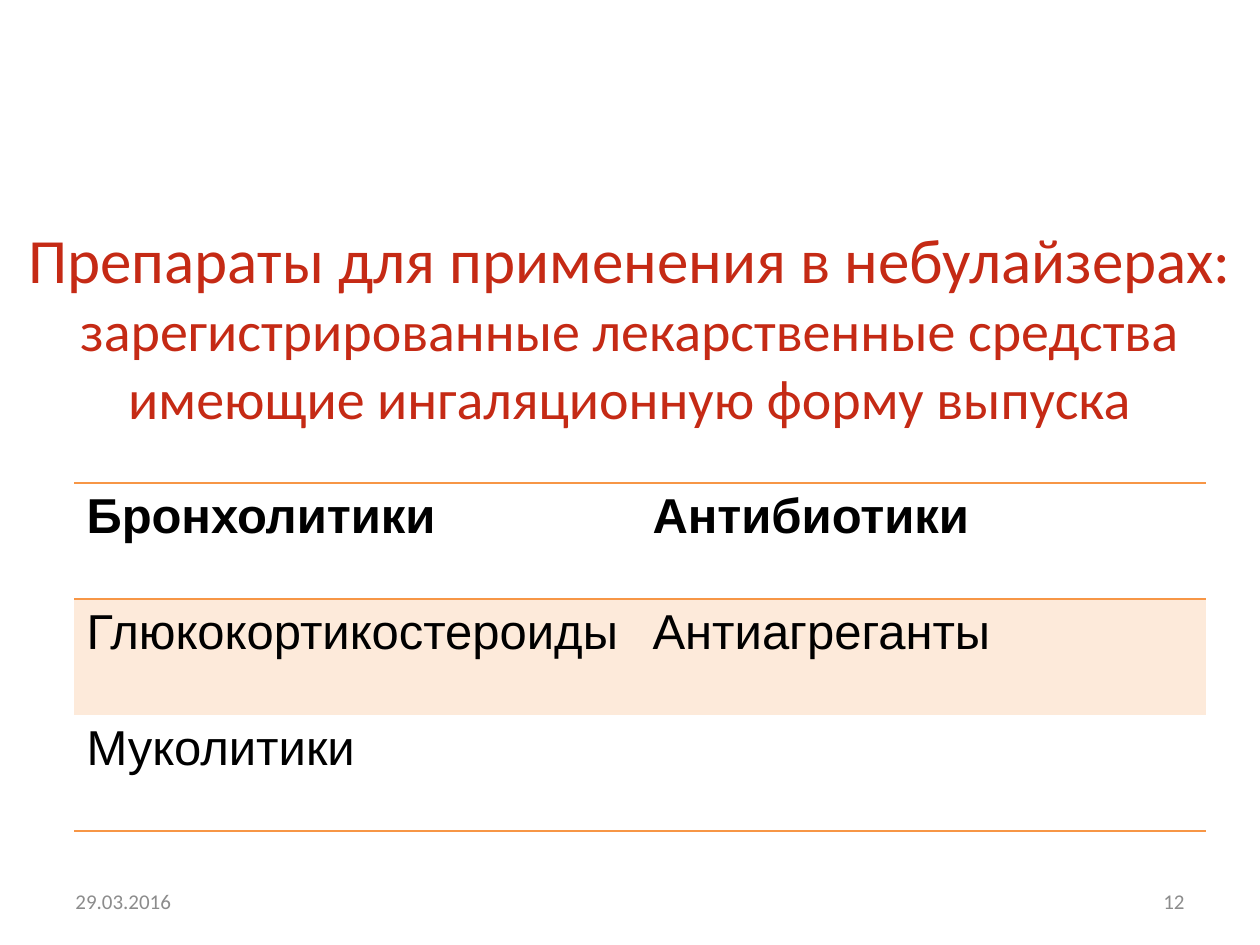
"""Build a slide listing drug groups for use in nebulizers."""
from dataclasses import dataclass

from pptx import Presentation
from pptx import util as u
from pptx.dml.color import RGBColor
from pptx.enum import text
from pptx.oxml import parse_xml
from pptx.oxml.ns import nsdecls


@dataclass(frozen=True)
class Theme:
    title: str = "C52A15"
    rule: str = "F79646"
    band: str = "FDEADA"
    ink: str = "000000"
    muted: str = "8C8C8C"
    heading_size: int = 36
    subheading_size: int = 32
    cell_size: int = 28
    footer_size: int = 12
    heading_font: str = "Calibri"
    cell_font: str = "Arial"


theme = Theme()
PX = u.Inches(1) / 126
ALIGN = text.PP_ALIGN


def px(*lengths):
    return [u.Emu(round(length * PX)) for length in lengths]


def write(words, *, para, size, color, font=theme.heading_font, bold=False, align=ALIGN.LEFT):
    para.alignment = align
    para.space_before = u.Pt(0)
    span = para.add_run()
    span.text = words
    span.font.name = font
    span.font.size = u.Pt(size)
    span.font.bold = bold
    span.font.color.rgb = RGBColor.from_string(color)


deck = Presentation()
deck.slide_width, deck.slide_height = px(1260, 945)
page = deck.slides.add_slide(deck.slide_layouts[5])

title = page.shapes.title
title.left, title.top, title.width, title.height = px(0, 214, 1260, 248)
frame = title.text_frame
frame.auto_size = text.MSO_AUTO_SIZE.NONE
frame.vertical_anchor = text.MSO_ANCHOR.TOP
frame.word_wrap = True
write("Препараты для применения в небулайзерах:", para=frame.paragraphs[0],
      size=theme.heading_size, color=theme.title, align=ALIGN.CENTER)
write("зарегистрированные лекарственные средства имеющие ингаляционную форму выпуска",
      para=frame.add_paragraph(), size=theme.subheading_size, color=theme.title,
      align=ALIGN.CENTER)

for words, left, align in (("29.03.2016", 63, ALIGN.LEFT), ("12", 903, ALIGN.RIGHT)):
    box = page.shapes.add_textbox(*px(left, 876, 294, 50))
    box.text_frame.word_wrap = True
    box.text_frame.vertical_anchor = text.MSO_ANCHOR.MIDDLE
    write(words, para=box.text_frame.paragraphs[0], size=theme.footer_size,
          color=theme.muted, align=align)

drug_groups = (
    ("Бронхолитики", "Антибиотики"),
    ("Глюкокортикостероиды", "Антиагреганты"),
    ("Муколитики", ""),
)
ruled_sides = ("TB", "T", "B")
table = page.shapes.add_table(3, 2, *px(74, 483, 1132, 348)).table
table.first_row = True
table.horz_banding = False

for row, groups in enumerate(drug_groups):
    for column, words in enumerate(groups):
        cell = table.cell(row, column)
        properties = cell._tc.get_or_add_tcPr()
        for side in "LRTB":
            paint = "<a:noFill/>"
            if side in ruled_sides[row]:
                paint = f'<a:solidFill><a:srgbClr val="{theme.rule}"/></a:solidFill>'
            properties.append(parse_xml(
                f'<a:ln{side} {nsdecls("a")} w="{u.Pt(1)}">{paint}</a:ln{side}>'))
        if row == 1:
            cell.fill.solid()
            cell.fill.fore_color.rgb = RGBColor.from_string(theme.band)
        else:
            cell.fill.background()
        if words:
            write(words, para=cell.text_frame.paragraphs[0], size=theme.cell_size,
                  color=theme.ink, font=theme.cell_font, bold=row == 0)

deck.save("out.pptx")
